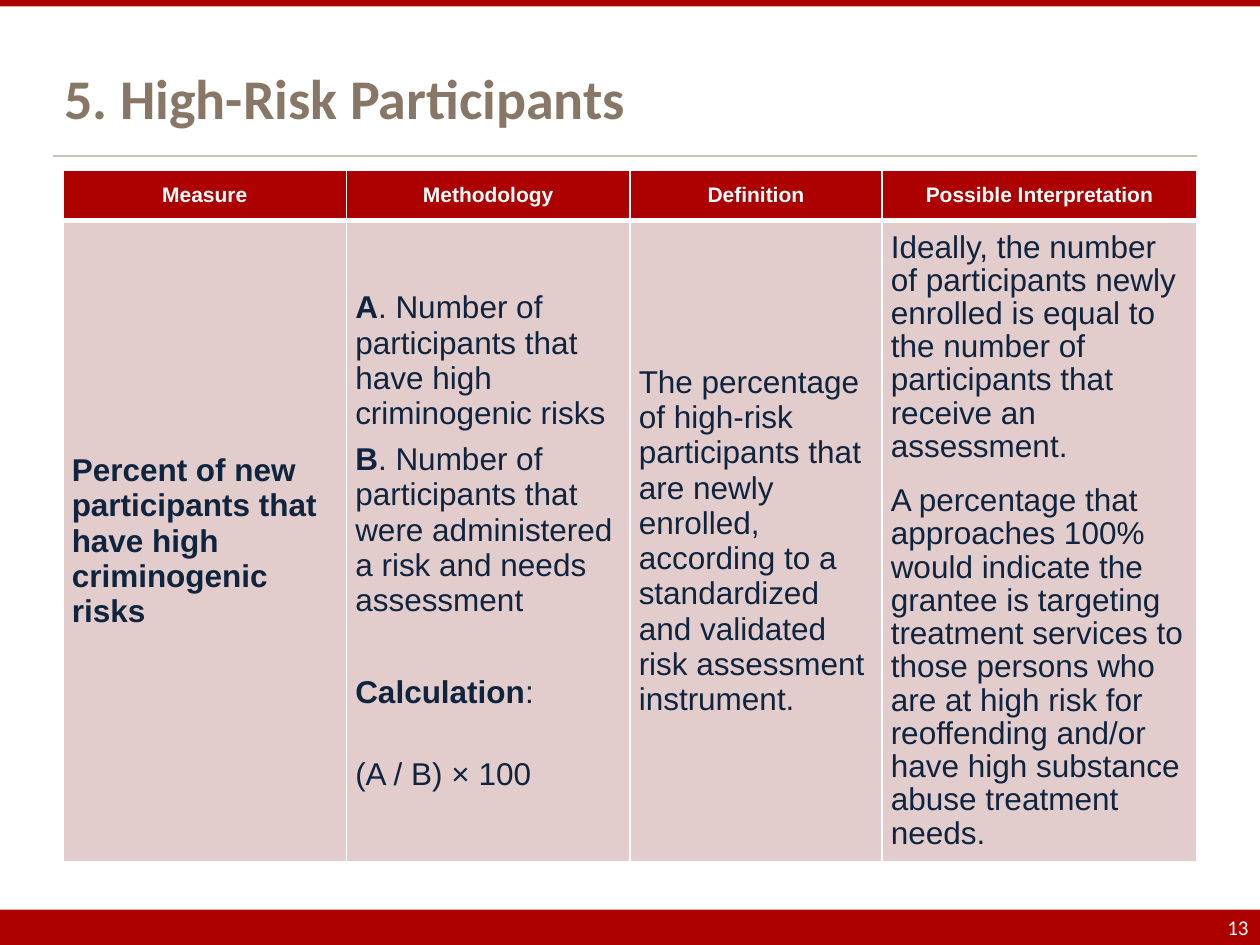
from lxml import etree
from pptx import Presentation
from pptx.dml.color import RGBColor
from pptx.enum.shapes import MSO_CONNECTOR, MSO_SHAPE
from pptx.enum.text import MSO_ANCHOR, MSO_AUTO_SIZE, PP_ALIGN
from pptx.oxml.ns import qn
from pptx.util import Inches, Pt

LEFT, CENTER, RIGHT = PP_ALIGN.LEFT, PP_ALIGN.CENTER, PP_ALIGN.RIGHT
MIDDLE, BOTTOM = MSO_ANCHOR.MIDDLE, MSO_ANCHOR.BOTTOM
RECTANGLE, STRAIGHT = MSO_SHAPE.RECTANGLE, MSO_CONNECTOR.STRAIGHT
NO_AUTOFIT = MSO_AUTO_SIZE.NONE

COLORS = {"red": "AD0101", "pink": "E3CCCC", "navy": "0F243E",
          "taupe": "887766", "rule": "CBC2B9", "white": "FFFFFF"}
WIDTH, HEIGHT = 10, 7.5
MARGIN = 0.42
FOOTER_HEIGHT = 0.28
FOOTER_TOP = HEIGHT - FOOTER_HEIGHT
COLUMN_WIDTHS = [2.25, 2.25, 2, 2.5]
ROW_HEIGHTS = [0.4, 5.09]

HEADINGS = ["Measure", "Methodology", "Definition", "Possible Interpretation"]
MEASURE = "Percent of new participants that have high criminogenic risks"
METHODOLOGY = [
    ([("A", True), (". Number of participants that have high criminogenic risks", False)], 0),
    ([("B", True), (". Number of participants that were administered a risk and "
                    "needs assessment", False)], 0),
    ([("Calculation", True), (":", False)], 26.5),
    ([("(A / B) × 100", False)], 20.5),
]
DEFINITION = ("The percentage of high-risk participants that are newly enrolled, "
              "according to a standardized and validated risk assessment instrument.")
INTERPRETATION = [
    ("Ideally, the number of participants newly enrolled is equal to the number "
     "of participants that receive an assessment.", 0),
    ("A percentage that approaches 100% would indicate the grantee is targeting "
     "treatment services to those persons who are at high risk for reoffending "
     "and/or have high substance abuse treatment needs.", 6),
]


def rgb(name):
    return RGBColor.from_string(COLORS[name])


def inches(*lengths):
    return [Inches(length) for length in lengths]


def write(frame, paragraphs, size=18, font="Arial", color="navy", bold=False,
          align=LEFT, after=0, spacing=None):
    if isinstance(paragraphs, str):
        paragraphs = [(paragraphs, 0)]
    for index, (content, before) in enumerate(paragraphs):
        paragraph = frame.add_paragraph() if index else frame.paragraphs[0]
        paragraph.alignment = align
        paragraph.space_before, paragraph.space_after = Pt(before), Pt(after)
        if spacing:
            paragraph.line_spacing = Pt(spacing)
        runs = [(content, bold)] if isinstance(content, str) else content
        for text, emphasis in runs:
            run = paragraph.add_run()
            run.text = text
            run.font.size, run.font.name = Pt(size), font
            run.font.bold = emphasis
            run.font.color.rgb = rgb(color)


def set_frame(frame, anchor):
    frame.word_wrap = True
    frame.auto_size = NO_AUTOFIT
    frame.vertical_anchor = anchor
    frame.margin_left = frame.margin_right = Inches(0.09)
    frame.margin_top = frame.margin_bottom = Inches(0.04)


def add_band(slide, top, height):
    band = slide.shapes.add_shape(RECTANGLE, *inches(0, top, WIDTH, height))
    band.shadow.inherit = False
    band.fill.solid()
    band.fill.fore_color.rgb = rgb("red")
    band.line.fill.background()


def add_rule(slide, y):
    rule = slide.shapes.add_connector(STRAIGHT, *inches(MARGIN, y, WIDTH - 0.5, y))
    rule.line.color.rgb = rgb("rule")
    rule.line.width = Pt(1.25)
    etree.SubElement(rule._element.spPr, qn("a:effectLst"))


def add_title(slide, text):
    title = slide.shapes.title
    title.left, title.top, title.width, title.height = inches(
        MARGIN, 0.25, WIDTH - 0.5 - MARGIN, 0.83)
    set_frame(title.text_frame, BOTTOM)
    write(title.text_frame, text, size=32, font="Calibri", color="taupe", bold=True)


def add_page_number(slide, number):
    width = 0.62
    box = slide.shapes.add_textbox(*inches(WIDTH - width, FOOTER_TOP, width, FOOTER_HEIGHT))
    set_frame(box.text_frame, MIDDLE)
    write(box.text_frame, number, size=12, font="Calibri", color="white", align=RIGHT)


def style_cell(cell, fill, bottom_border=1):
    cell.vertical_anchor = MIDDLE
    cell.margin_left = cell.margin_right = Inches(0.07)
    cell.margin_top = cell.margin_bottom = 0
    properties = cell._tc.get_or_add_tcPr()
    for side, width in zip("LRTB", (1, 1, 1, bottom_border)):
        border = etree.SubElement(properties, qn(f"a:ln{side}"), w=str(Pt(width)))
        paint = etree.SubElement(border, qn("a:solidFill"))
        etree.SubElement(paint, qn("a:srgbClr"), val=COLORS["white"])
    cell.fill.solid()
    cell.fill.fore_color.rgb = rgb(fill)


def add_measures_table(slide):
    table = slide.shapes.add_table(
        len(ROW_HEIGHTS), len(COLUMN_WIDTHS),
        *inches(0.5, 1.35, sum(COLUMN_WIDTHS), sum(ROW_HEIGHTS))).table
    for column, width in zip(table.columns, COLUMN_WIDTHS):
        column.width = Inches(width)
    for row, height in zip(table.rows, ROW_HEIGHTS):
        row.height = Inches(height)
    details = [(MEASURE, {"bold": True}), (METHODOLOGY, {}),
               (DEFINITION, {}), (INTERPRETATION, {"spacing": 19})]
    for index, (heading, (detail, style)) in enumerate(zip(HEADINGS, details)):
        heading_cell, detail_cell = table.cell(0, index), table.cell(1, index)
        style_cell(heading_cell, "red", bottom_border=3)
        write(heading_cell.text_frame, heading, size=12, color="white",
              bold=True, align=CENTER, after=6)
        style_cell(detail_cell, "pink")
        write(detail_cell.text_frame, detail, after=6, **style)


def main():
    presentation = Presentation()
    presentation.slide_width, presentation.slide_height = inches(WIDTH, HEIGHT)
    slide = presentation.slides.add_slide(presentation.slide_layouts[5])
    add_band(slide, FOOTER_TOP, FOOTER_HEIGHT)
    add_band(slide, 0, 0.05)
    add_rule(slide, 1.24)
    add_measures_table(slide)
    add_page_number(slide, "13")
    add_title(slide, "5. High-Risk Participants")
    presentation.save("out.pptx")


if __name__ == "__main__":
    main()
